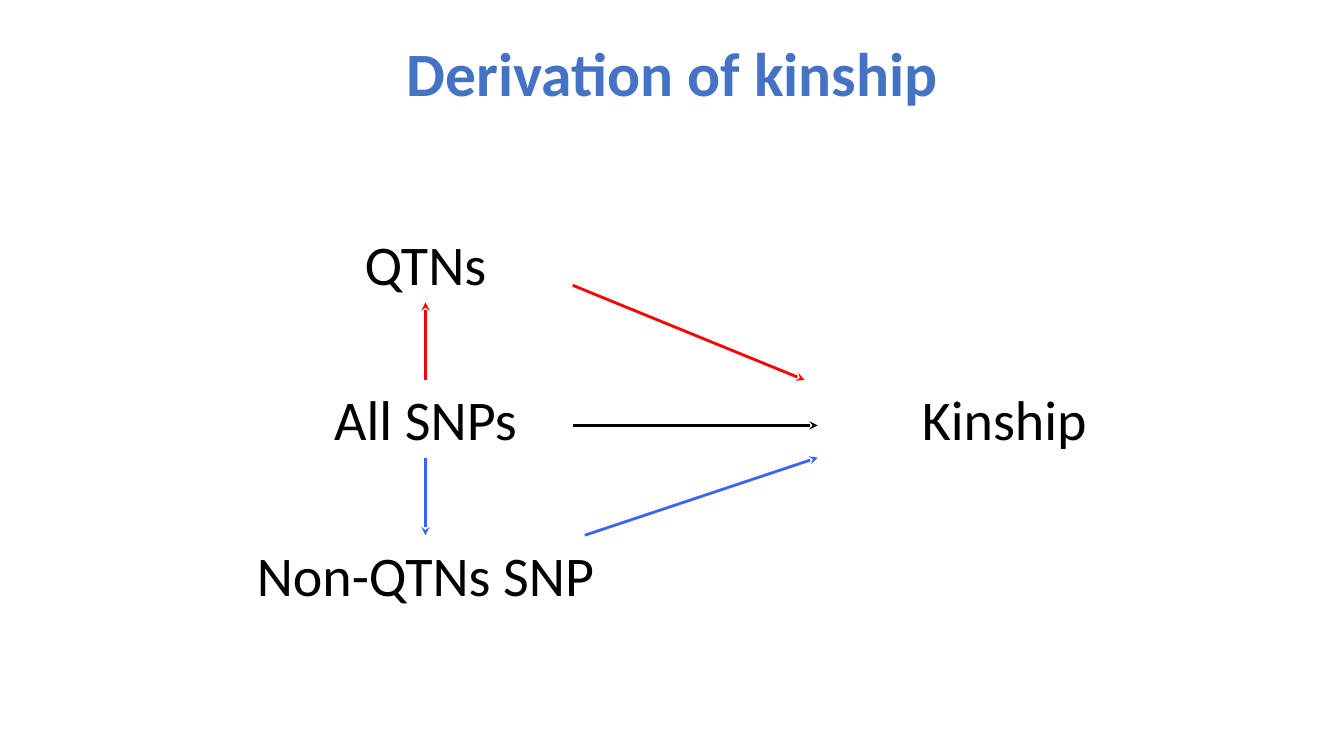
import pptx
import pptx.util
import pptx.dml.color
import pptx.enum.shapes
import pptx.enum.text
import lxml.etree
import pptx.oxml.ns

PX = 9144  # 100 px to the inch
FONT = "Calibri"
BLACK = pptx.dml.color.RGBColor(0x00, 0x00, 0x00)
TITLE = pptx.dml.color.RGBColor(0x44, 0x72, 0xC4)
RED = pptx.dml.color.RGBColor(0xFF, 0x00, 0x00)
BLUE = pptx.dml.color.RGBColor(0x33, 0x66, 0xFF)

TOP, BOTTOM = 0, 2  # connection sites
LABEL = 77  # label height
PITCH = 154  # from one row of labels to the next


def px(*vals):
    return [pptx.util.Emu(val * PX) for val in vals]


def write(shape, text, size=40, color=BLACK, bold=False, space=None,
          anchor=pptx.enum.text.MSO_ANCHOR.TOP):
    frame = shape.text_frame
    frame.text = text
    frame.word_wrap = True
    frame.vertical_anchor = anchor
    par = frame.paragraphs[0]
    par.alignment = pptx.enum.text.PP_ALIGN.CENTER
    par.line_spacing = space
    font = par.runs[0].font
    font.name, font.size, font.bold = FONT, pptx.util.Pt(size), bold
    font.color.rgb = color


def label(slide, text, mid, top, width):
    box = slide.shapes.add_textbox(*px(mid - width // 2, top, width, LABEL))
    write(box, text)
    box.text_frame.auto_size = pptx.enum.text.MSO_AUTO_SIZE.SHAPE_TO_FIT_TEXT
    return box


def arrow(slide, color, start=(0, 0), end=(0, 0)):
    kind = pptx.enum.shapes.MSO_CONNECTOR.STRAIGHT
    line = slide.shapes.add_connector(kind, *px(*start, *end))
    line.line.color.rgb = color
    line.line.width = pptx.util.Pt(2)
    qn = pptx.oxml.ns.qn
    tail = lxml.etree.SubElement(line.line._get_or_add_ln(), qn("a:tailEnd"))
    tail.set("type", "stealth")
    lxml.etree.SubElement(line._element.spPr, qn("a:effectLst"))
    return line


def heading(slide, left, top, width, height):
    title = slide.shapes.title
    title.left, title.top, title.width, title.height = px(left, top, width, height)
    write(title, "Derivation of kinship", size=44, color=TITLE, bold=True,
          space=0.9, anchor=pptx.enum.text.MSO_ANCHOR.MIDDLE)


def diagram(slide, left, top, width):
    # Sources in one column, the result at the right of the middle row
    names = [("QTNs", 350), ("All SNPs", 350), ("Non-QTNs SNP", 412)]
    qtn, snp, rest = [label(slide, text, left + 206, top + row * PITCH, wide)
                      for row, (text, wide) in enumerate(names)]
    label(slide, "Kinship", left + width - 140, top + PITCH, 280)

    # All SNPs split into the two subsets
    for color, site, goal, port in [(RED, TOP, qtn, BOTTOM),
                                    (BLUE, BOTTOM, rest, TOP)]:
        link = arrow(slide, color)
        link.begin_connect(snp, site)
        link.end_connect(goal, port)

    # Each source leads to kinship
    for color, x1, y1, x2, y2 in [
        (RED, 352, 60, 582, PITCH),
        (BLACK, 352, 199, 595, 199),
        (BLUE, 364, 2 * PITCH, 595, PITCH + LABEL),
    ]:
        arrow(slide, color, (left + x1, top + y1), (left + x2, top + y2))


def main():
    deck = pptx.Presentation()
    deck.slide_width, deck.slide_height = px(1333, 750)
    slide = deck.slides.add_slide(deck.slide_layouts[5])
    heading(slide, 92, 3, 1150, 145)
    diagram(slide, 216, 223, 920)
    deck.save("out.pptx")


if __name__ == "__main__":
    main()
